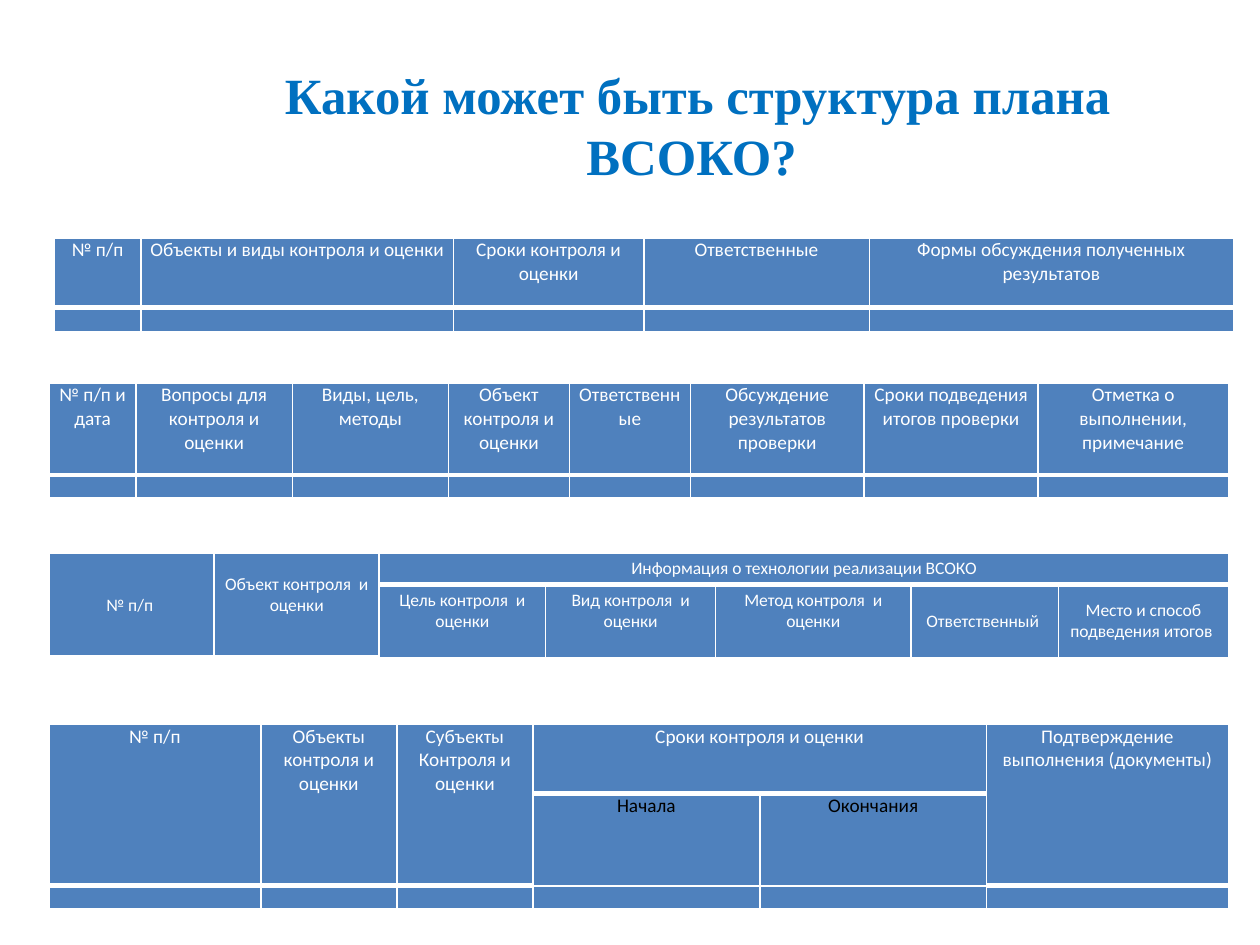
from dataclasses import dataclass

from lxml import etree
from pptx import Presentation
from pptx.dml.color import RGBColor
from pptx.enum.text import MSO_ANCHOR, PP_ALIGN
from pptx.oxml.ns import qn
from pptx.util import Inches, Pt

CENTER = PP_ALIGN.CENTER
TOP, MIDDLE = MSO_ANCHOR.TOP, MSO_ANCHOR.MIDDLE
COLORS = {"title": "0070C0", "cell": "4F81BD", "light": "FFFFFF", "dark": "000000"}
SLIDE_WIDTH, SLIDE_HEIGHT = 10, 7.5
TABLE_WIDTH = 0.936 * SLIDE_WIDTH
TABLE_LEFT = 0.039 * SLIDE_WIDTH
THIN, THICK = 1, 3


@dataclass
class Heading:
    text: str
    row: int
    column: int
    row_span: int = 1
    column_span: int = 1
    raised: bool = False
    color: str = "light"


@dataclass
class PlanTable:
    top: float
    column_shares: list[float]
    row_heights: list[float]
    headings: list[Heading]
    left: float = TABLE_LEFT
    size: int = 11
    anchor: MSO_ANCHOR = TOP
    margins: tuple[float, float] = (0.07, 0)


def heading_row(*texts: str) -> list[Heading]:
    return [Heading(text, 0, column) for column, text in enumerate(texts)]


TABLES = [
    PlanTable(
        1.89, [0.69, 2.48, 1.51, 1.79, 2.89], [0.55, 0.19],
        heading_row(
            "№ п/п", "Объекты и виды контроля и оценки", "Сроки контроля и оценки",
            "Ответственные", "Формы обсуждения полученных результатов",
        ),
        left=0.043 * SLIDE_WIDTH,
    ),
    PlanTable(
        3.04, [0.69, 1.24, 1.24, 0.96, 0.96, 1.38, 1.38, 1.51], [0.73, 0.18],
        heading_row(
            "№ п/п и дата", "Вопросы для контроля и оценки", "Виды, цель, методы",
            "Объект контроля и оценки", "Ответственные",
            "Обсуждение результатов проверки", "Сроки подведения итогов проверки",
            "Отметка о выполнении, примечание",
        ),
    ),
    PlanTable(
        4.39, [1.31, 1.31, 1.32, 1.35, 1.55, 1.17, 1.35], [0.25, 0.58],
        [
            Heading("№ п/п ", 0, 0, row_span=2),
            Heading("Объект контроля  и оценки", 0, 1, row_span=2, raised=True),
            Heading("Информация о технологии реализации ВСОКО", 0, 2, column_span=5),
            Heading("Цель контроля  и оценки", 1, 2, raised=True),
            Heading("Вид контроля  и оценки", 1, 3, raised=True),
            Heading("Метод контроля  и оценки", 1, 4, raised=True),
            Heading("Ответственный ", 1, 5),
            Heading("Место и способ подведения итогов ", 1, 6),
        ],
        size=10, anchor=MIDDLE, margins=(0.04, 0.04),
    ),
    PlanTable(
        5.75, [1.68, 1.08, 1.08, 1.8, 1.8, 1.92], [0.55, 0.73, 0.18],
        [
            Heading("№ п/п", 0, 0, row_span=2),
            Heading("Объекты контроля и оценки", 0, 1, row_span=2),
            Heading("Субъекты\nКонтроля и оценки", 0, 2, row_span=2),
            Heading("Сроки контроля и оценки", 0, 3, column_span=2),
            Heading("Подтверждение\nвыполнения (документы)", 0, 5, row_span=2),
            Heading("Начала", 1, 3, color="dark"),
            Heading("Окончания", 1, 4, color="dark"),
        ],
    ),
]


def rgb(name: str) -> RGBColor:
    return RGBColor.from_string(COLORS[name])


def format_text(frame, font: str, size: int, color: str, bold: bool = False) -> None:
    for para in frame.paragraphs:
        para.alignment = CENTER
        for span in para.runs:
            span.font.name = font
            span.font.size = Pt(size)
            span.font.bold = bold
            span.font.color.rgb = rgb(color)


def add_borders(cell, bottom: int) -> None:
    properties = cell._tc.get_or_add_tcPr()
    widths = {"lnL": THIN, "lnR": THIN, "lnT": THIN, "lnB": bottom}
    for index, (side, width) in enumerate(widths.items()):
        line = etree.Element(qn(f"a:{side}"), w=str(Pt(width)))
        fill = etree.SubElement(line, qn("a:solidFill"))
        etree.SubElement(fill, qn("a:srgbClr"), val=COLORS["light"])
        properties.insert(index, line)


def style_cell(cell, plan: PlanTable, bottom: int) -> None:
    cell.fill.solid()
    cell.fill.fore_color.rgb = rgb("cell")
    cell.vertical_anchor = plan.anchor
    side, edge = plan.margins
    cell.margin_left = cell.margin_right = Inches(side)
    cell.margin_top = cell.margin_bottom = Inches(edge)
    add_borders(cell, bottom)
    # The end mark's size keeps an empty row from growing.
    mark = cell.text_frame.paragraphs[0]._p.get_or_add_endParaRPr()
    mark.set("sz", str(plan.size * 100))


def add_plan_table(page, plan: PlanTable) -> None:
    rows, columns = len(plan.row_heights), len(plan.column_shares)
    table = page.shapes.add_table(
        rows, columns, Inches(plan.left), Inches(plan.top),
        Inches(TABLE_WIDTH), Inches(sum(plan.row_heights)),
    ).table
    total = sum(plan.column_shares)
    for column, share in zip(table.columns, plan.column_shares):
        column.width = Inches(TABLE_WIDTH * share / total)
    for row, height in zip(table.rows, plan.row_heights):
        row.height = Inches(height)
    for row in range(rows):
        for column in range(columns):
            style_cell(table.cell(row, column), plan, THIN if row else THICK)
    for heading in plan.headings:
        cell = table.cell(heading.row, heading.column)
        if heading.row_span > 1 or heading.column_span > 1:
            cell.merge(table.cell(
                heading.row + heading.row_span - 1,
                heading.column + heading.column_span - 1,
            ))
        cell.text_frame.text = heading.text
        format_text(cell.text_frame, "Calibri", plan.size, heading.color)
        if heading.raised:
            cell.margin_bottom = Inches(0.2)


def add_title(page) -> None:
    box = page.shapes.add_textbox(
        Inches(0.136 * SLIDE_WIDTH), Inches(0.061 * SLIDE_HEIGHT),
        Inches(0.836 * SLIDE_WIDTH), Inches(0.143 * SLIDE_HEIGHT),
    )
    box.fill.solid()
    box.fill.fore_color.rgb = rgb("light")
    frame = box.text_frame
    frame.word_wrap = True
    frame.vertical_anchor = MIDDLE
    frame.text = "Какой может быть структура плана ВСОКО? "
    format_text(frame, "Times New Roman", 29, "title", bold=True)


def main() -> None:
    deck = Presentation()
    deck.slide_width, deck.slide_height = Inches(SLIDE_WIDTH), Inches(SLIDE_HEIGHT)
    page = deck.slides.add_slide(deck.slide_layouts[6])
    add_title(page)
    for plan in TABLES:
        add_plan_table(page, plan)
    deck.save("out.pptx")


if __name__ == "__main__":
    main()
